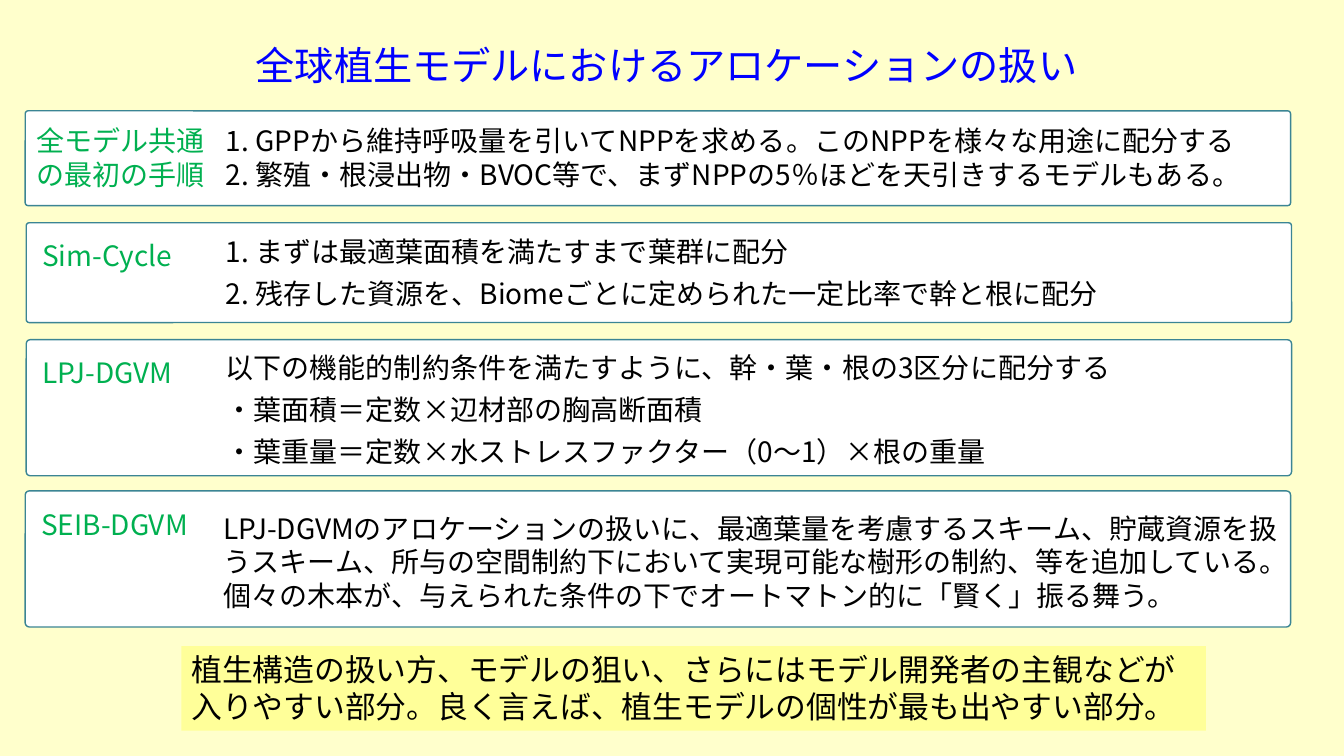
"""Build a slide on how global vegetation models treat allocation."""
from lxml import etree
from pptx import Presentation
from pptx.dml.color import RGBColor
from pptx.enum import shapes, text
from pptx.oxml import ns
from pptx.util import Inches, Pt

FONT = "Noto Sans CJK JP"
CREAM = RGBColor(0xFF, 0xFF, 0xCC)
YELLOW = RGBColor(0xFF, 0xFF, 0x99)
WHITE = RGBColor(0xFF, 0xFF, 0xFF)
TEAL = RGBColor(0x3B, 0x85, 0x94)
BLUE = RGBColor(0x00, 0x00, 0xFF)
GREEN = RGBColor(0x00, 0xB0, 0x50)
BLACK = RGBColor(0x00, 0x00, 0x00)


def write(box, lines, size=20, color=BLACK, align=text.PP_ALIGN.LEFT,
          anchor=text.MSO_ANCHOR.TOP, after=0, wrap=True):
    frame = box.text_frame
    frame.word_wrap = wrap
    frame.vertical_anchor = anchor
    for index, line in enumerate(lines):
        para = frame.add_paragraph() if index else frame.paragraphs[0]
        para.alignment = align
        para.space_after = Pt(after)
        span = para.add_run()
        span.text = line
        span.font.size = Pt(size)
        span.font.color.rgb = color
        span.font.name = FONT
        east_asian = etree.SubElement(span.font._element, ns.qn("a:ea"))
        east_asian.set("typeface", FONT)


def add_panel(kind, left, top, width, height, fill):
    panel = page.shapes.add_shape(
        kind, Inches(left), Inches(top), Inches(width), Inches(height))
    panel.shadow.inherit = False
    panel.fill.solid()
    panel.fill.fore_color.rgb = fill
    return panel


deck = Presentation()
deck.slide_width, deck.slide_height = Inches(13.33), Inches(7.5)
page = deck.slides.add_slide(deck.slide_layouts[5])
page.background.fill.solid()
page.background.fill.fore_color.rgb = CREAM

title = page.shapes.title
title.left, title.top = Inches(1.64), Inches(0.36)
title.width, title.height = Inches(9.94), Inches(0.57)
write(title, ["全球植生モデルにおけるアロケーションの扱い"], size=28, color=BLUE,
      align=text.PP_ALIGN.CENTER, anchor=text.MSO_ANCHOR.MIDDLE)

models = [
    dict(panel=(0.25, 1.1, 0.94), label=(0.26, 1.18, 0.77),
         body=(2.14, 1.18, 10.57, 0.77), after=0, wrap=False,
         name=["全モデル共通", "の最初の手順"],
         lines=["1. GPPから維持呼吸量を引いてNPPを求める。このNPPを様々な用途に配分する",
                "2. 繁殖・根浸出物・BVOC等で、まずNPPの5％ほどを天引きするモデルもある。"]),
    dict(panel=(0.26, 2.21, 0.99), label=(0.32, 2.32, 0.44),
         body=(2.14, 2.28, 9.96, 0.86), after=6, wrap=True,
         name=["Sim-Cycle"],
         lines=["1. まずは最適葉面積を満たすまで葉群に配分",
                "2. 残存した資源を、Biomeごとに定められた一定比率で幹と根に配分"]),
    dict(panel=(0.26, 3.37, 1.35), label=(0.32, 3.48, 0.44),
         body=(2.14, 3.43, 10.41, 1.28), after=6, wrap=True,
         name=["LPJ-DGVM"],
         lines=["以下の機能的制約条件を満たすように、幹・葉・根の3区分に配分する",
                "・葉面積＝定数×辺材部の胸高断面積",
                "・葉重量＝定数×水ストレスファクター（0～1）×根の重量"]),
    dict(panel=(0.25, 4.87, 1.35), label=(0.31, 4.99, 0.44),
         body=(2.12, 5.02, 10.74, 1.11), after=6, wrap=True,
         name=["SEIB-DGVM"],
         lines=["LPJ-DGVMのアロケーションの扱いに、最適葉量を考慮するスキーム、"
                "貯蔵資源を扱うスキーム、所与の空間制約下において実現可能な樹形の制約、"
                "等を追加している。個々の木本が、与えられた条件の下で"
                "オートマトン的に「賢く」振る舞う。"]),
]
for model in models:
    left, top, height = model["panel"]
    panel = add_panel(shapes.MSO_SHAPE.ROUNDED_RECTANGLE,
                      left, top, 12.55, height, WHITE)
    panel.adjustments[0] = 0.03
    panel.line.color.rgb = TEAL
    panel.line.width = Pt(1)

    left, top, height = model["label"]
    label = page.shapes.add_textbox(
        Inches(left), Inches(top), Inches(4.65), Inches(height))
    write(label, model["name"], color=GREEN)

    body = page.shapes.add_textbox(*[Inches(length) for length in model["body"]])
    write(body, model["lines"], after=model["after"], wrap=model["wrap"])

summary = add_panel(shapes.MSO_SHAPE.RECTANGLE, 1.8, 6.41, 10.16, 0.84, YELLOW)
summary.line.fill.background()
write(summary, ["植生構造の扱い方、モデルの狙い、さらにはモデル開発者の主観などが"
                "入りやすい部分。良く言えば、植生モデルの個性が最も出やすい部分。"], size=22)

deck.save("out.pptx")
